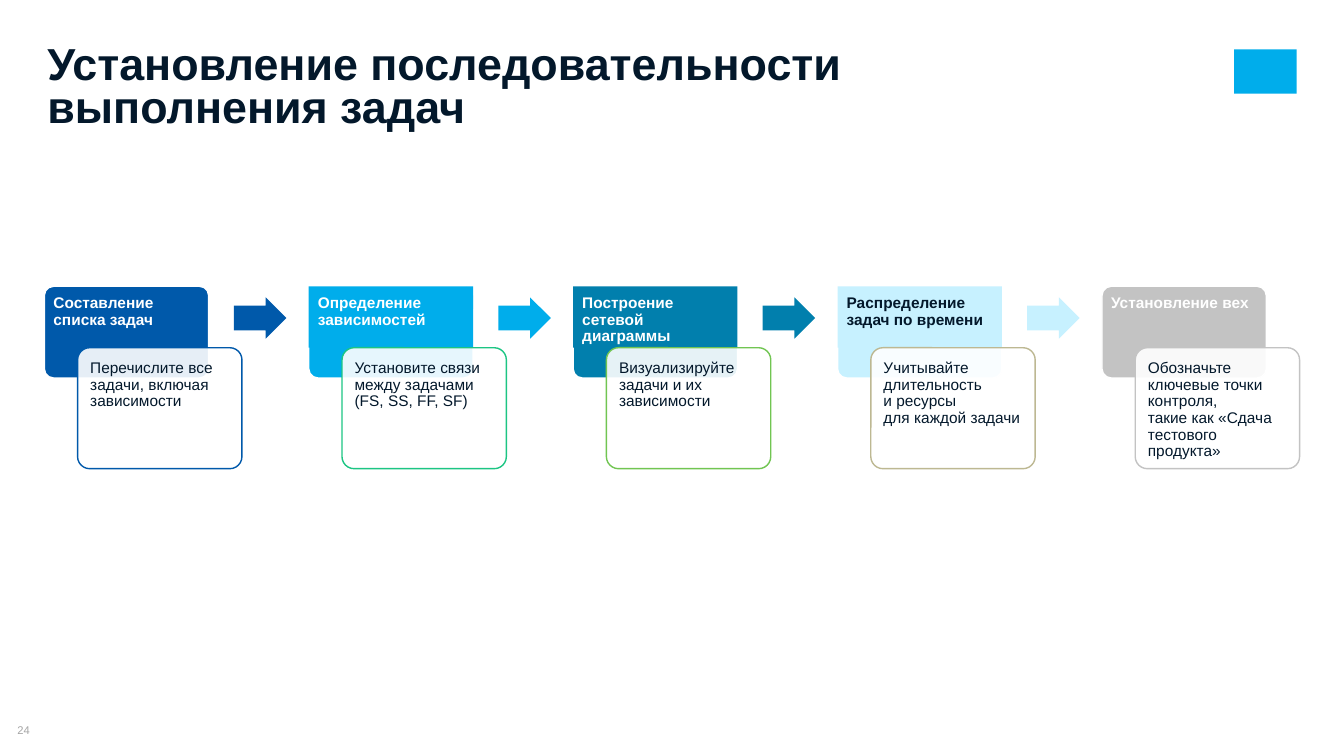
from lxml.etree import SubElement
from pptx import Presentation
from pptx.dml.color import RGBColor
from pptx.enum.shapes import MSO_SHAPE
from pptx.enum.text import MSO_ANCHOR, MSO_AUTO_SIZE, PP_ALIGN
from pptx.oxml.ns import qn
from pptx.util import Inches, Pt

NAVY = RGBColor(0x03, 0x18, 0x2B)
WHITE = RGBColor(0xFF, 0xFF, 0xFF)
BLUE = RGBColor(0x00, 0x59, 0xAA)
SKY = RGBColor(0x00, 0xAD, 0xEB)
TEAL = RGBColor(0x01, 0x7F, 0xAD)
PALE = RGBColor(0xC7, 0xF1, 0xFF)
SILVER = RGBColor(0xC3, 0xC3, 0xC3)
GREEN = RGBColor(0x1C, 0xC5, 0x83)
LIME = RGBColor(0x71, 0xC5, 0x52)
SAND = RGBColor(0xBD, 0xB8, 0x92)
GRAY = RGBColor(0xA6, 0xA6, 0xA6)

# Heading, heading colour, fill, square heading, card outline, card text
STEPS = [
    ("Составление списка задач", WHITE, BLUE, False, BLUE,
     "Перечислите все задачи, включая зависимости"),
    ("Определение зависимостей", WHITE, SKY, True, GREEN,
     "Установите связи между задачами (FS, SS, FF, SF)"),
    ("Построение сетевой диаграммы", WHITE, TEAL, True, LIME,
     "Визуализируйте задачи и их зависимости"),
    ("Распределение задач по времени", NAVY, PALE, True, SAND,
     "Учитывайте длительность\nи ресурсы\nдля каждой задачи"),
    ("Установление вех", WHITE, SILVER, False, SILVER,
     "Обозначьте ключевые точки контроля,\nтакие как «Сдача тестового продукта»"),
]
FIRST_LEFT, LAST_LEFT = 0.44, 10.93
PITCH = (LAST_LEFT - FIRST_LEFT) / (len(STEPS) - 1)
TOP = 2.84
BOX_WIDTH = 1.63
HEADING_HEIGHT = 0.61


class SlideBuilder:
    """Holds the text style and the slide being filled."""

    font = "Arial"
    text_size = 11

    def __init__(self, slide):
        self.slide = slide

    def set_text(self, shape, text, color, size=text_size, bold=False, spacing=0.9,
                 align=PP_ALIGN.LEFT, anchor=MSO_ANCHOR.TOP, insets=(0, 0, 0, 0)):
        """Fill a shape with one paragraph; insets run left, top, right, bottom."""
        frame = shape.text_frame
        frame.word_wrap = True
        frame.auto_size = MSO_AUTO_SIZE.NONE
        frame.vertical_anchor = anchor
        (frame.margin_left, frame.margin_top,
         frame.margin_right, frame.margin_bottom) = map(Inches, insets)
        para = frame.paragraphs[0]
        para.alignment = align
        para.line_spacing = spacing
        for index, line in enumerate(text.split("\n")):
            if index:
                para.add_line_break()
            span = para.add_run()
            span.text = line
            span.font.name = self.font
            span.font.size = Pt(size)
            span.font.bold = bold
            span.font.color.rgb = color

    def title(self, text, left, top, width, height):
        title = self.slide.shapes.title
        title.left, title.top = Inches(left), Inches(top)
        title.width, title.height = Inches(width), Inches(height)
        self.set_text(title, text, NAVY, size=32, bold=True, spacing=0.8)

    def text_box(self, left, top, width, height):
        return self.slide.shapes.add_textbox(
            Inches(left), Inches(top), Inches(width), Inches(height))

    def shape(self, kind, left, top, width, height, fill, line=None, adjustments=()):
        shape = self.slide.shapes.add_shape(
            kind, Inches(left), Inches(top), Inches(width), Inches(height))
        shape.shadow.inherit = False
        shape.fill.solid()
        shape.fill.fore_color.rgb = fill
        if line is None:
            shape.line.fill.background()
        else:
            shape.line.color.rgb = line
            shape.line.width = Pt(1)
        for index, value in enumerate(adjustments):
            shape.adjustments[index] = value
        return shape

    def heading(self, left, text, color, fill, square):
        self.shape(MSO_SHAPE.ROUNDED_RECTANGLE, left, TOP, BOX_WIDTH, 0.91,
                   fill, WHITE, [0.1])
        area = (left, TOP, BOX_WIDTH, HEADING_HEIGHT)
        if square:
            box = self.shape(MSO_SHAPE.RECTANGLE, *area, fill)
        else:
            box = self.text_box(*area)
        self.set_text(box, text, color, bold=True, insets=(0.09, 0.09, 0.09, 0.05))

    def card(self, left, text, outline):
        card = self.shape(MSO_SHAPE.ROUNDED_RECTANGLE, left, TOP + HEADING_HEIGHT,
                          BOX_WIDTH, 1.2, WHITE, outline, [0.1])
        fill_color = card.element.spPr.find(qn("a:solidFill"))[0]
        SubElement(fill_color, qn("a:alpha"), val="90000")
        self.set_text(card, text, NAVY, insets=(0.09, 0.09, 0.09, 0.09))

    def arrow(self, left, fill):
        self.shape(MSO_SHAPE.RIGHT_ARROW, left, TOP + 0.11, 0.52, 0.41,
                   fill, adjustments=[0.6, 0.5])

    def page_number(self, text):
        box = self.text_box(0, 7.18, 0.47, 0.13)
        self.set_text(box, text, GRAY, size=8, spacing=1,
                      align=PP_ALIGN.CENTER, anchor=MSO_ANCHOR.MIDDLE)


def main():
    deck = Presentation()
    deck.slide_width, deck.slide_height = Inches(13.33), Inches(7.5)
    page = SlideBuilder(deck.slides.add_slide(deck.slide_layouts.get_by_name("Title Only")))

    page.shape(MSO_SHAPE.RECTANGLE, 12.24, 0.49, 0.62, 0.44, SKY)
    page.page_number("24")
    page.title("Установление последовательности\nвыполнения задач",
               0.47, 0.46, 10.51, 0.86)

    for index, (heading, color, fill, square, outline, text) in enumerate(STEPS):
        left = FIRST_LEFT + index * PITCH
        page.heading(left, heading, color, fill, square)
        page.card(left + 0.33, text, outline)
        if index < len(STEPS) - 1:
            page.arrow(left + 1.88, fill)

    deck.save("out.pptx")


if __name__ == "__main__":
    main()
